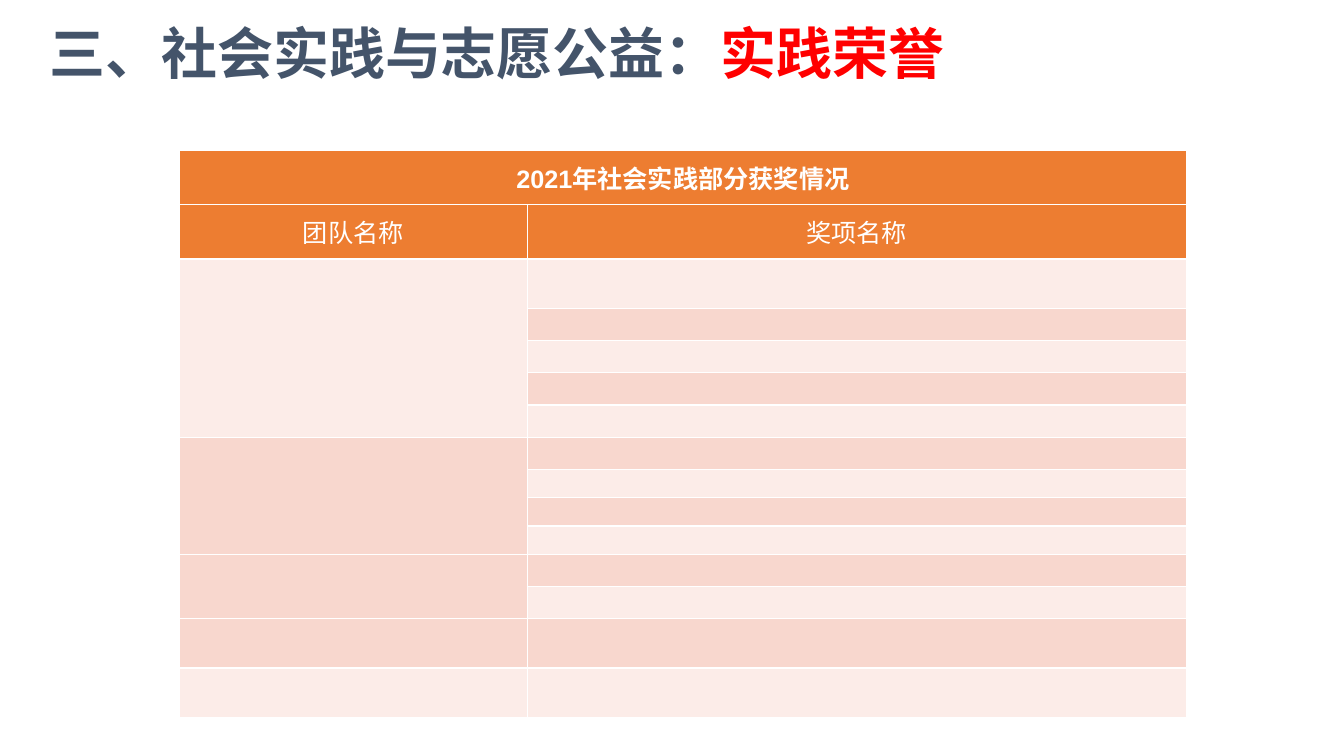
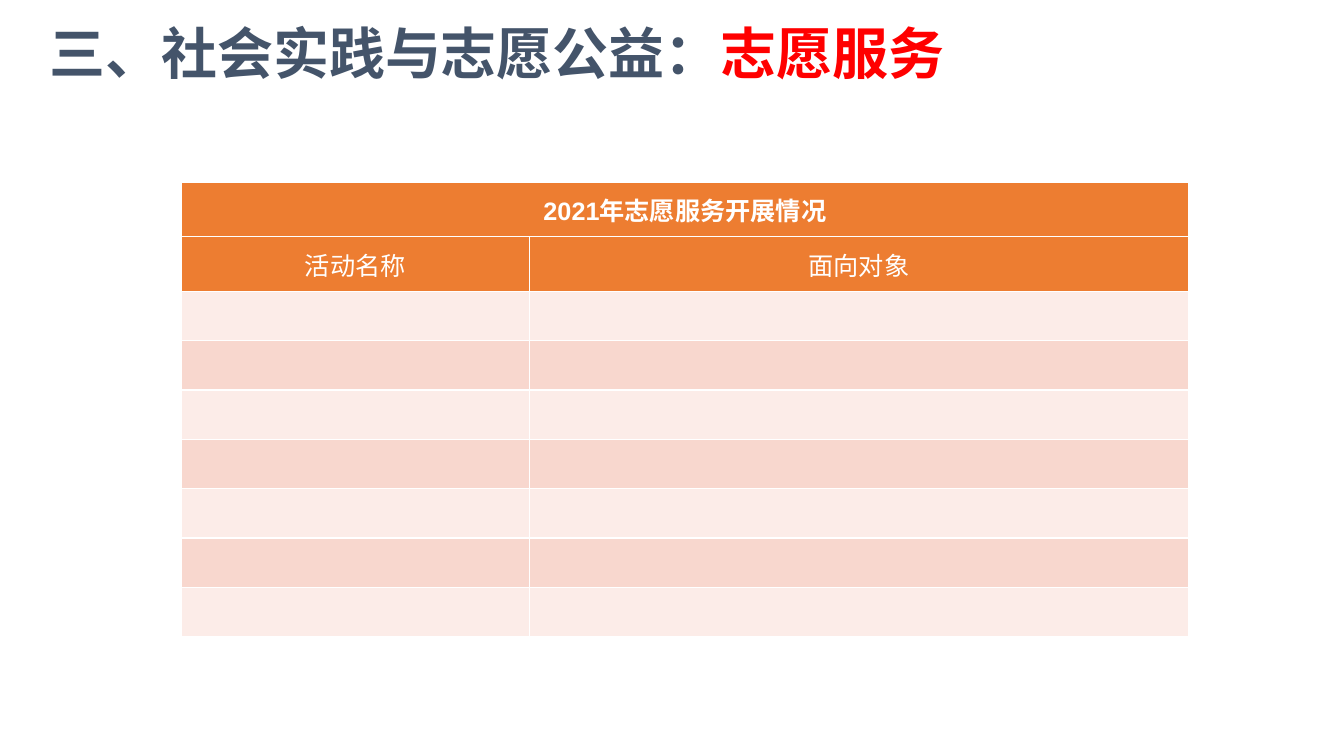
from pptx import Presentation
from pptx.dml.color import RGBColor
from pptx.enum import text as txt
from pptx.oxml import ns
from lxml import etree

PX = 9144
NAVY, RED, WHITE = "44546A", "FF0000", "FFFFFF"
ORANGE, PALE, PINK = "ED7D31", "FCECE8", "F8D7CE"
SANS = "Noto Sans CJK SC"
TOPIC = "三、社会实践与志愿公益："
HEAD = 54
COLS = (345, 654)


def px(n):
    return round(n * PX)


def tint(code):
    return RGBColor.from_string(code)


def place(shape, box):
    shape.left, shape.top, shape.width, shape.height = map(px, box)


def add_title(slide, part, box):
    title = slide.shapes.title
    place(title, box)
    frame = title.text_frame
    frame.word_wrap = True
    frame.auto_size = txt.MSO_AUTO_SIZE.NONE
    frame.vertical_anchor = txt.MSO_ANCHOR.TOP
    para = frame.paragraphs[0]
    para.alignment = txt.PP_ALIGN.LEFT
    para.line_spacing = 0.9
    para._p.get_or_add_pPr().set("marL", str(px(10)))
    for words, code in ((TOPIC, NAVY), (part, RED)):
        run = para.add_run()
        run.text = words
        font = run.font
        font.size, font.bold, font.name = px(0) + 40 * 12700, True, SANS
        font.color.rgb = tint(code)
        east = etree.SubElement(run._r.get_or_add_rPr(), ns.qn("a:ea"))
        east.set("typeface", SANS)


def fill_cell(cell, code):
    cell.fill.solid()
    cell.fill.fore_color.rgb = tint(code)


def write_head(cell, words, bold):
    cell.text = words
    cell.vertical_anchor = txt.MSO_ANCHOR.MIDDLE
    para = cell.text_frame.paragraphs[0]
    para.alignment = txt.PP_ALIGN.CENTER
    font = para.font
    font.size, font.bold, font.name = 18 * 12700, bold, "Arial"
    font.color.rgb = tint(WHITE)


def clear_cell(cell):
    cell.margin_top = cell.margin_bottom = 0
    para = cell.text_frame.paragraphs[0]
    etree.SubElement(para._p, ns.qn("a:endParaRPr")).set("sz", "600")


def add_grid(slide, spot, name, heads, rows, spans):
    sizes = [HEAD, HEAD] + rows
    box = (*spot, sum(COLS), sum(sizes))
    grid = slide.shapes.add_table(len(sizes), len(COLS), *map(px, box)).table
    for col, wide in zip(grid.columns, COLS):
        col.width = px(wide)
    for i, (row, high) in enumerate(zip(grid.rows, sizes)):
        row.height = px(high)
        for cell in row.cells:
            fill_cell(cell, ORANGE if i < 2 else (PALE, PINK)[i % 2])
            if i >= 2:
                clear_cell(cell)
    grid.cell(0, 0).merge(grid.cell(0, 1))
    write_head(grid.cell(0, 0), name, True)
    for j, words in enumerate(heads):
        write_head(grid.cell(1, j), words, False)
    start = 2
    for span in spans:
        if span > 1:
            grid.cell(start, 0).merge(grid.cell(start + span - 1, 0))
        start += span


def add_page(deck, part, spot, *grid):
    slide = deck.slides.add_slide(deck.slide_layouts[5])
    add_title(slide, part, (29, 21, 1187, 77))
    add_grid(slide, spot, *grid)


def main():
    deck = Presentation()
    deck.slide_width, deck.slide_height = px(1333.33), px(750)
    add_page(
        deck, "实践荣誉", (178, 149),
        "2021年社会实践部分获奖情况", ("团队名称", "奖项名称"),
        [49] + [32] * 5 + [28] * 3 + [32] * 2 + [49] * 2, (5, 4, 2, 1, 1),
    )
    add_page(
        deck, "志愿服务", (180, 181),
        "2021年志愿服务开展情况", ("活动名称", "面向对象"),
        [49] * 7, (1,) * 7,
    )
    deck.save("out.pptx")


if __name__ == "__main__":
    main()
